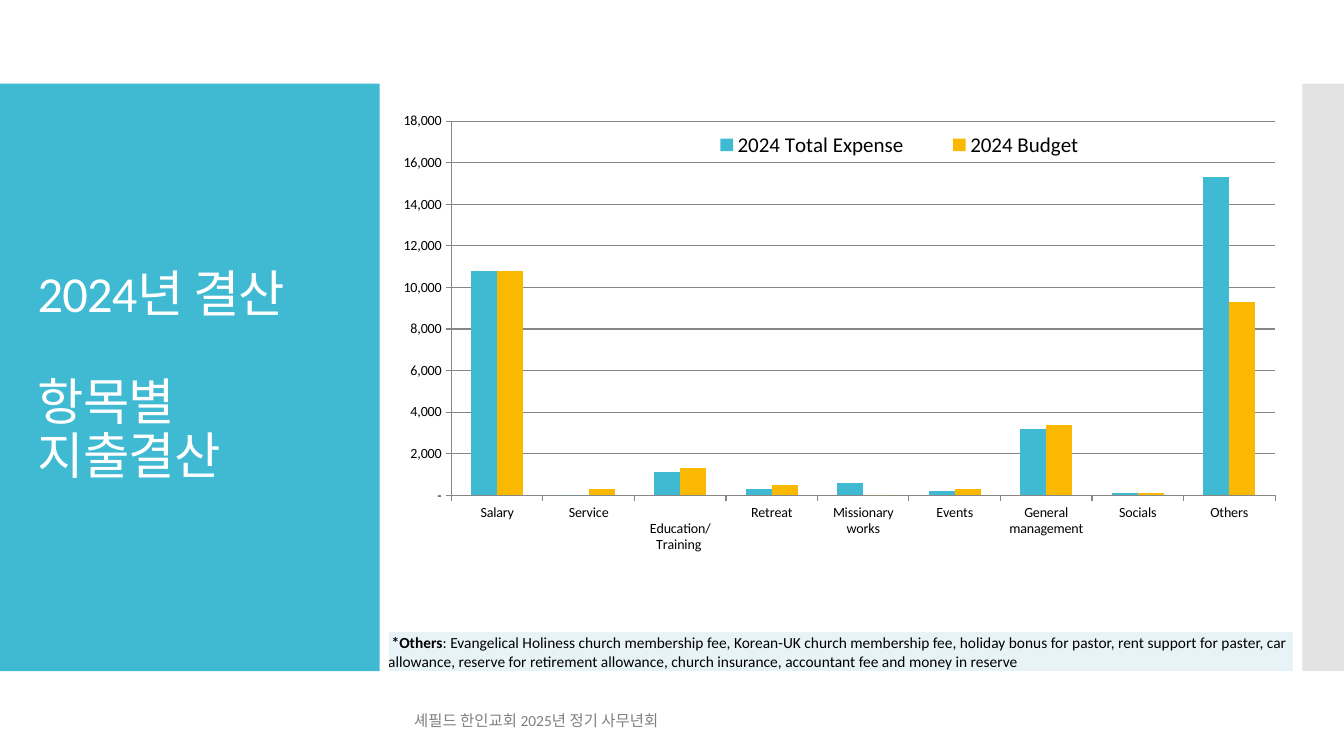
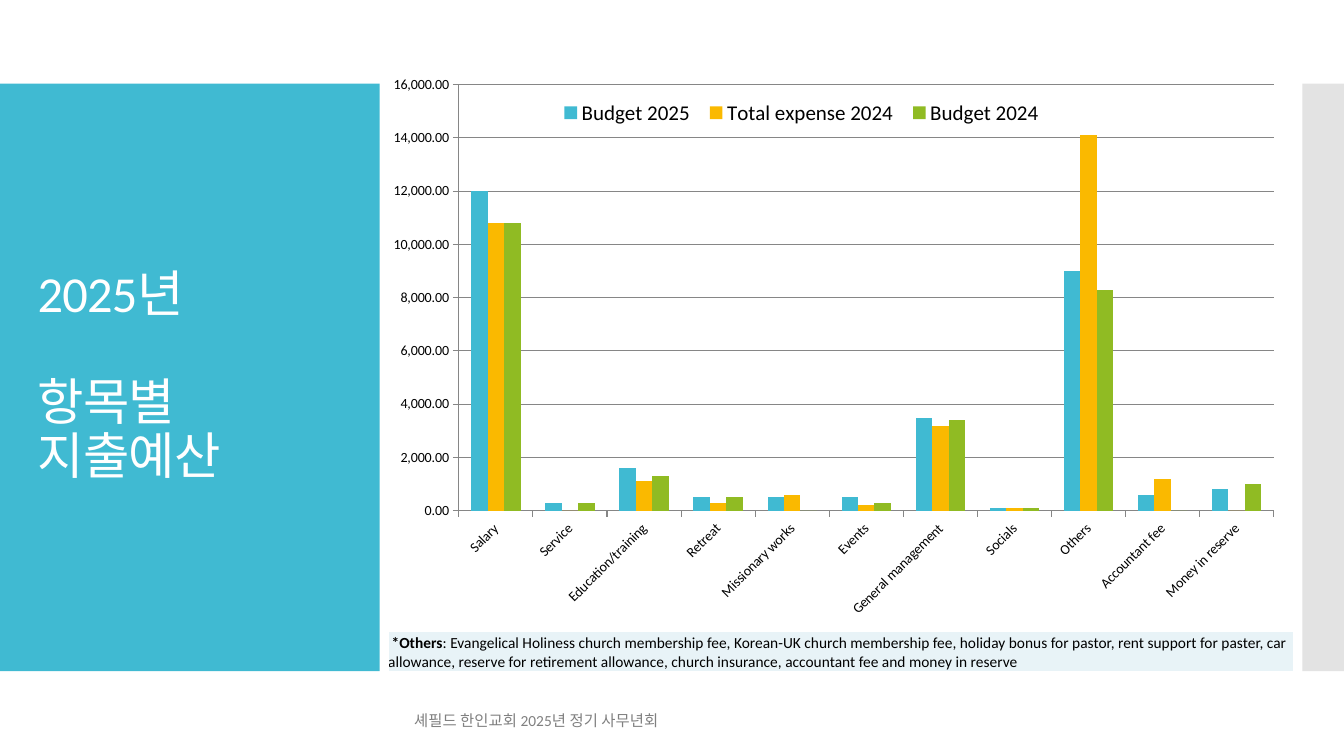
from lxml import etree
from pptx import Presentation
from pptx.chart.data import CategoryChartData
from pptx.dml.color import RGBColor
from pptx.enum.chart import XL_CHART_TYPE, XL_LEGEND_POSITION
from pptx.enum.shapes import MSO_SHAPE
from pptx.enum.text import MSO_ANCHOR, MSO_AUTO_SIZE, PP_ALIGN
from pptx.oxml.ns import qn
from pptx.util import Pt

COLUMNS = XL_CHART_TYPE.COLUMN_CLUSTERED
LEGEND_TOP = XL_LEGEND_POSITION.TOP
RECT = MSO_SHAPE.RECTANGLE
MIDDLE, BOTTOM = MSO_ANCHOR.MIDDLE, MSO_ANCHOR.BOTTOM
LEFT = PP_ALIGN.LEFT
NO_FIT = MSO_AUTO_SIZE.NONE
TITLE_ONLY = 5

COLORS = {
    "teal": "40BAD2", "amber": "FAB900", "green": "90BB23",
    "side": "E3E3E3", "note": "E8F3F7", "axis": "868686",
    "footer": "808080", "white": "FFFFFF", "black": "000000",
}
FONT = "Calibri"
FOOTER = "셰필드 한인교회 2025년 정기 사무년회"
NOTE_HEAD = " *Others"
NOTE_BODY = (
    ": Evangelical Holiness church membership fee, Korean-UK church membership fee, "
    "holiday bonus for pastor, rent support for paster, car allowance, reserve for "
    "retirement allowance, church insurance, accountant fee and money in reserve"
)


def rgb(name):
    return RGBColor.from_string(COLORS[name])


def set_layout(parent, index, box, inner=False):
    """Give a plot area or legend a fixed box, in fractions of the chart."""
    for old in parent.findall(qn("c:layout")):
        parent.remove(old)
    layout = etree.Element(qn("c:layout"))
    manual = etree.SubElement(layout, qn("c:manualLayout"))
    settings = [("layoutTarget", "inner")] if inner else []
    settings += [("xMode", "edge"), ("yMode", "edge"), *zip("xywh", box)]
    for tag, value in settings:
        etree.SubElement(manual, qn(f"c:{tag}")).set("val", str(value))
    parent.insert(index, layout)


def set_borders(cell, color, width):
    tcPr = cell._tc.get_or_add_tcPr()
    for i, side in enumerate(("lnL", "lnR", "lnT", "lnB")):
        ln = etree.Element(qn(f"a:{side}"), w=str(Pt(width)))
        fill = etree.SubElement(ln, qn("a:solidFill"))
        etree.SubElement(fill, qn("a:srgbClr"), val=COLORS[color])
        tcPr.insert(i, ln)


class Deck:
    def __init__(self):
        self.prs = Presentation()
        self.prs.slide_width, self.prs.slide_height = Pt(960), Pt(540)
        self.s = None

    def style(self, font, size, color):
        font.name, font.size, font.color.rgb = FONT, Pt(size), rgb(color)

    def slide(self, *title):
        self.s = self.prs.slides.add_slide(self.prs.slide_layouts[TITLE_ONLY])
        self.band((0, 59.75, 271.25, 419.75), "teal")
        self.band((930.25, 59.75, 29.75, 419.75), "side")
        self.title(title)
        self.footer()

    def band(self, box, color):
        """Draw a plain rectangle behind the title."""
        band = self.s.shapes.add_shape(RECT, *map(Pt, box))
        band.shadow.inherit = False
        band.fill.solid()
        band.fill.fore_color.rgb = rgb(color)
        band.line.fill.background()
        self.s.shapes.title.element.addprevious(band.element)

    def title(self, lines):
        title = self.s.shapes.title
        title.left, title.top, title.width, title.height = map(
            Pt, (19.75, 88.5, 232, 362))
        tf = title.text_frame
        tf.text = "\n".join(lines)
        tf.vertical_anchor, tf.auto_size = MIDDLE, NO_FIT
        for i, p in enumerate(tf.paragraphs):
            p.alignment, p.line_spacing = LEFT, 0.9
            p.space_before = Pt(38 if i else 0)
            self.style(p.font, 36, "white")
            for r in p.runs:
                r._r.get_or_add_rPr().set("spc", "-60")

    def footer(self):
        box = map(Pt, (288.75, 500, 482, 28.75))
        tf = self.s.shapes.add_textbox(*box).text_frame
        tf.word_wrap, tf.vertical_anchor = True, MIDDLE
        p = tf.paragraphs[0]
        p.text, p.space_after = FOOTER, Pt(6)
        self.style(p.font, 11, "footer")

    def note(self):
        box = map(Pt, (277.25, 450.75, 646.5, 28.75))
        table = self.s.shapes.add_table(1, 1, *box).table
        table.first_row = table.horz_banding = False
        cell = table.cell(0, 0)
        cell.margin_left = cell.margin_right = cell.margin_top = cell.margin_bottom = 0
        cell.vertical_anchor = BOTTOM
        cell.fill.solid()
        cell.fill.fore_color.rgb = rgb("note")
        set_borders(cell, "white", 1)
        p = cell.text_frame.paragraphs[0]
        self.style(p.font, 11, "black")
        for text, bold in ((NOTE_HEAD, True), (NOTE_BODY, False)):
            r = p.add_run()
            r.text, r.font.bold = text, bold

    def chart(self, box, cats, series, maximum, number_format, plot, legend, angle=0):
        data = CategoryChartData()
        data.categories = cats
        for name, _, values in series:
            data.add_series(name, values)
        chart = self.s.shapes.add_chart(COLUMNS, *map(Pt, box), data).chart
        chart.has_title = False
        self.style(chart.font, 10, "black")

        columns = chart.plots[0]
        columns.gap_width, columns.overlap, columns.vary_by_categories = 150, 0, False
        for column, (_, color, _) in zip(columns.series, series):
            column.format.fill.solid()
            column.format.fill.fore_color.rgb = rgb(color)

        cat_axis, val_axis = chart.category_axis, chart.value_axis
        val_axis.minimum_scale, val_axis.maximum_scale = 0, maximum
        val_axis.major_unit = 2000
        val_axis.has_major_gridlines = True
        for line in (cat_axis, val_axis, val_axis.major_gridlines):
            line.format.line.color.rgb = rgb("axis")
            line.format.line.width = Pt(0.75)
        labels = val_axis.tick_labels
        labels.number_format, labels.number_format_is_linked = number_format, False
        self.style(cat_axis.tick_labels.font, 10, "black")
        bodyPr = cat_axis._element.find(f"{qn('c:txPr')}/{qn('a:bodyPr')}")
        bodyPr.set("rot", str(angle * 60000))

        chart.has_legend = True
        chart.legend.position = LEGEND_TOP
        chart.legend.include_in_layout = False
        self.style(chart.legend.font, 15, "black")
        set_layout(chart.legend._element, 1, legend)
        set_layout(chart._chartSpace.chart.plotArea, 0, plot, inner=True)


def main():
    deck = Deck()

    deck.slide("2024년 결산", "항목별 지출결산")
    deck.note()
    deck.chart(
        (277.25, 75.25, 646.5, 376.5),
        ["Salary", "Service", " Education/Training ", "Retreat", "Missionary works",
         "Events", "General management", "Socials", "Others"],
        [("2024 Total Expense", "teal",
          (10800, 0, 1100, 300, 600, 200, 3200, 100, 15300)),
         ("2024 Budget", "amber",
          (10800, 300, 1300, 500, 0, 300, 3400, 100, 9300))],
        18000, '#,##0;-#,##0;"-"',
        plot=(0.07, 0.03, 0.91, 0.71), legend=(0.32, 0.04, 0.49, 0.07))

    deck.slide("2025년", "항목별 지출예산")
    deck.chart(
        (268.25, 48.5, 661.5, 400.5),
        ["Salary", "Service", "Education/training", "Retreat", "Missionary works",
         "Events", "General management", "Socials", "Others", "Accountant fee",
         "Money in reserve"],
        [("Budget 2025", "teal",
          (12000, 300, 1600, 500, 500, 500, 3500, 100, 9000, 600, 800)),
         ("Total expense 2024", "amber",
          (10800, 0, 1100, 300, 600, 200, 3200, 100, 14100, 1200, 0)),
         ("Budget 2024", "green",
          (10800, 300, 1300, 500, 0, 300, 3400, 100, 8300, 0, 1000))],
        16000, "#,##0.00",
        plot=(0.09, 0.03, 0.88, 0.76), legend=(0.19, 0.05, 0.54, 0.06), angle=-45)
    deck.note()

    deck.prs.save("out.pptx")


if __name__ == "__main__":
    main()
